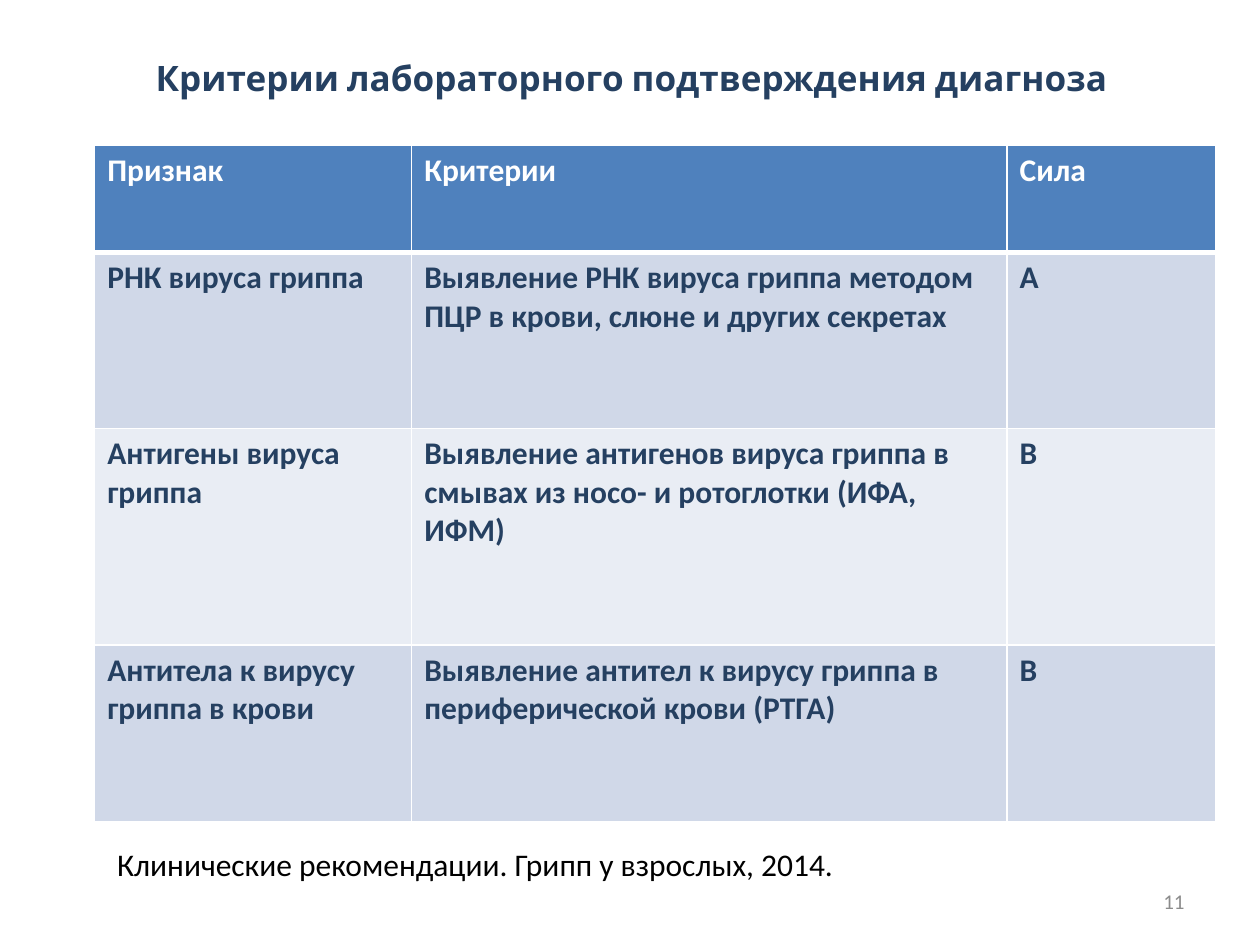
from lxml import etree
from pptx import Presentation
from pptx.dml.color import RGBColor
from pptx.enum.text import MSO_ANCHOR, PP_ALIGN
from pptx.oxml.ns import qn
from pptx.util import Cm, Pt

LEFT, CENTER, RIGHT = PP_ALIGN.LEFT, PP_ALIGN.CENTER, PP_ALIGN.RIGHT
TOP, MIDDLE = MSO_ANCHOR.TOP, MSO_ANCHOR.MIDDLE

NAVY = RGBColor(0x25, 0x40, 0x61)
BLUE = RGBColor(0x4F, 0x81, 0xBD)
BAND_DARK = RGBColor(0xD0, 0xD8, 0xE8)
BAND_LIGHT = RGBColor(0xE9, 0xED, 0xF4)
GREY = RGBColor(0x8C, 0x8C, 0x8C)
BLACK = RGBColor(0, 0, 0)
WHITE = RGBColor(255, 255, 255)

COLUMN_WIDTHS = (6.39, 12.0, 4.2)
ROW_HEIGHTS = (2.16, 3.55, 4.36, 3.56)
CRITERIA = (
    ("Признак", "Критерии", "Сила"),
    ("РНК вируса гриппа",
     "Выявление РНК вируса гриппа методом ПЦР в крови, слюне и других секретах", "А"),
    ("Антигены вируса гриппа",
     "Выявление антигенов вируса гриппа в смывах из носо- и ротоглотки (ИФА, ИФМ)", "В"),
    ("Антитела к вирусу гриппа в крови",
     "Выявление антител к вирусу гриппа в периферической крови (РТГА)", "В"),
)


class SlideBuilder:
    """Holds the text style and the current slide."""

    font = "Calibri"
    size = 18

    def __init__(self, page):
        self.page = page

    def style(self, frame, color, bold=False, size=None, font=None, align=LEFT):
        for para in frame.paragraphs:
            para.alignment = align
            for span in para.runs:
                span.font.name = font or self.font
                span.font.size = Pt(size or self.size)
                span.font.bold = bold
                span.font.color.rgb = color

    def text(self, text, left, top, width, height, color, anchor=TOP, **style):
        box = self.page.shapes.add_textbox(Cm(left), Cm(top), Cm(width), Cm(height))
        frame = box.text_frame
        frame.word_wrap = True
        frame.vertical_anchor = anchor
        frame.text = text
        self.style(frame, color, **style)

    def border(self, cell, side, width):
        properties = cell._tc.get_or_add_tcPr()
        line = etree.SubElement(properties, qn(f"a:ln{side}"), w=str(Pt(width)))
        fill = etree.SubElement(line, qn("a:solidFill"))
        etree.SubElement(fill, qn("a:srgbClr"), val=str(WHITE))

    def table(self, rows, left, top, widths, heights):
        frame = self.page.shapes.add_table(
            len(rows), len(widths), Cm(left), Cm(top), Cm(sum(widths)), Cm(sum(heights)))
        table = frame.table
        for column, width in zip(table.columns, widths):
            column.width = Cm(width)
        for row_index, (row, height) in enumerate(zip(rows, heights)):
            table.rows[row_index].height = Cm(height)
            header = row_index == 0
            band = BAND_DARK if row_index % 2 else BAND_LIGHT
            for column_index, text in enumerate(row):
                cell = table.cell(row_index, column_index)
                for side in "LRTB":
                    # The rule under the header is thicker
                    thick = (header and side == "B") or (row_index == 1 and side == "T")
                    self.border(cell, side, 3 if thick else 1)
                cell.fill.solid()
                cell.fill.fore_color.rgb = BLUE if header else band
                cell.text_frame.text = text
                self.style(cell.text_frame, WHITE if header else NAVY, bold=True)


def main():
    deck = Presentation()
    deck.slide_width, deck.slide_height = Cm(25.4), Cm(19.05)
    builder = SlideBuilder(deck.slides.add_slide(deck.slide_layouts[6]))

    # Title
    builder.text("Критерии лабораторного подтверждения диагноза", 1.3, 0.91, 22.86, 1.32,
                 NAVY, anchor=MIDDLE, bold=True, size=20, font="Cabin", align=CENTER)

    # Criteria table
    builder.table(CRITERIA, 1.91, 2.93, COLUMN_WIDTHS, ROW_HEIGHTS)

    # Reference and page number
    builder.text("Клинические рекомендации. Грипп у взрослых, 2014.",
                 2.11, 16.92, 22.4, 1.02, BLACK)
    builder.text("11", 18.2, 17.66, 5.93, 1.01, GREY, anchor=MIDDLE, size=12, align=RIGHT)

    deck.save("out.pptx")


if __name__ == "__main__":
    main()
